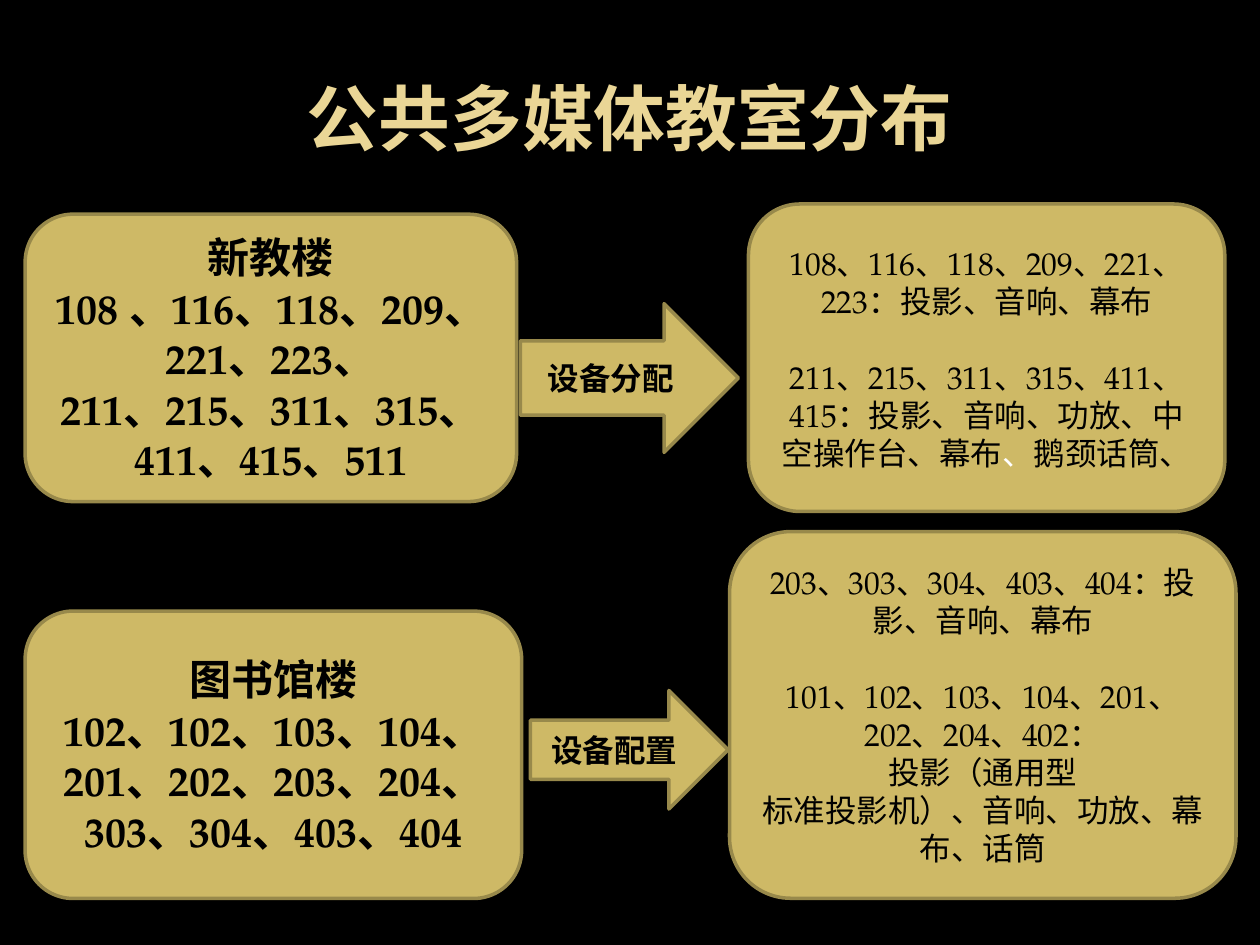
from lxml.etree import SubElement
from pptx import Presentation
from pptx.dml.color import RGBColor as RGB
from pptx.enum.shapes import MSO_SHAPE as Kind
from pptx.enum.text import MSO_ANCHOR as Anchor, PP_ALIGN as Align
from pptx.oxml.ns import qn
from pptx.util import Pt

# Content: each paragraph is a tuple of pieces, every second one white
TITLE = "公共多媒体教室分布"
HALLS = [
    [("新教楼",), ("108 、116、118、209、221、223、\v211、215、311、315、411、415、511",)],
    [("图书馆楼",), ("102、102、103、104、201、202、203、204、303、304、403、404",)],
]
GEAR = [
    [("108、116、118、209、221、223：投影、音响、幕布",),
     ("211、215、311、315、411、415：投影、音响、功放、中空操作台、幕布", "、", "鹅颈话筒、")],
    [("203、303、304、403、404：投影、音响、幕布",),
     ("101、102、103、104、201、202、204、402：\v投影（通用型\v标准投影机）、音响、功放、幕布、话筒",)],
]
STEPS = [[("设备分配",)], [("设备配置",)]]

# Left, top, width, height of each part, one entry per row
HALL_AT = [(14.4, 122.4, 280.8, 164.2), (14.4, 349.2, 283.7, 164.2)]
GEAR_AT = [(427.7, 116.6, 272.2, 175.7), (416.9, 303.8, 289.4, 209.5)]
STEP_AT = [(297.4, 173.5, 124.6, 85), (303.1, 394.6, 113, 67.7)]

HEX = {"back": "000000", "ink": "000000", "white": "FFFFFF",
       "gold": "CEB966", "edge": "98894B", "title": "EAD696"}
SERIF, SANS = "TeX Gyre Pagella", "Noto Sans CJK SC"


def tint(name):
    return RGB.from_string(HEX[name])


def style(run, size, bold, name, face):
    font = run.font
    font.size, font.bold, font.name = Pt(size), bold, face
    font.color.rgb = tint(name)
    SubElement(run._r.get_or_add_rPr(), qn("a:ea"), typeface=SANS)


def block(kind, spot, paras, size, bold, gap=0):
    box = slide.shapes.add_shape(kind, *map(Pt, spot))
    box.shadow.inherit = False
    box.fill.solid()
    box.fill.fore_color.rgb = tint("gold")
    box.line.color.rgb = tint("edge")
    box.line.width = Pt(2)
    frame = box.text_frame
    frame.word_wrap = True
    frame.vertical_anchor = Anchor.MIDDLE
    for i, parts in enumerate(paras):
        para = frame.add_paragraph() if i else frame.paragraphs[0]
        para.alignment = Align.CENTER
        para.space_before = Pt(gap if i else 0)
        para.text = parts[0]
        for run in para.runs:
            style(run, size, bold, "ink", SERIF)
        for j, part in enumerate(parts[1:], 1):
            run = para.add_run()
            run.text = part
            style(run, size, bold, "white" if j % 2 else "ink", SERIF)


deck = Presentation()
deck.slide_width, deck.slide_height = Pt(720), Pt(540)
slide = deck.slides.add_slide(deck.slide_layouts[5])
slide.background.fill.solid()
slide.background.fill.fore_color.rgb = tint("back")

# Title
head = slide.shapes.title
head.left, head.top, head.width, head.height = map(Pt, (36, 21.6, 648, 90))
head.text_frame.text = TITLE
head.text_frame.vertical_anchor = Anchor.MIDDLE
line = head.text_frame.paragraphs[0]
line.alignment = Align.CENTER
style(line.runs[0], 41, True, "title", SANS)

# Rooms, equipment and the arrows between them
for spot, paras in zip(HALL_AT, HALLS):
    block(Kind.ROUNDED_RECTANGLE, spot, paras, 24, True)
for spot, paras in zip(GEAR_AT, GEAR):
    block(Kind.ROUNDED_RECTANGLE, spot, paras, 18, False, gap=22)
for spot, paras in zip(STEP_AT, STEPS):
    block(Kind.RIGHT_ARROW, spot, paras, 18, True)

deck.save("out.pptx")
